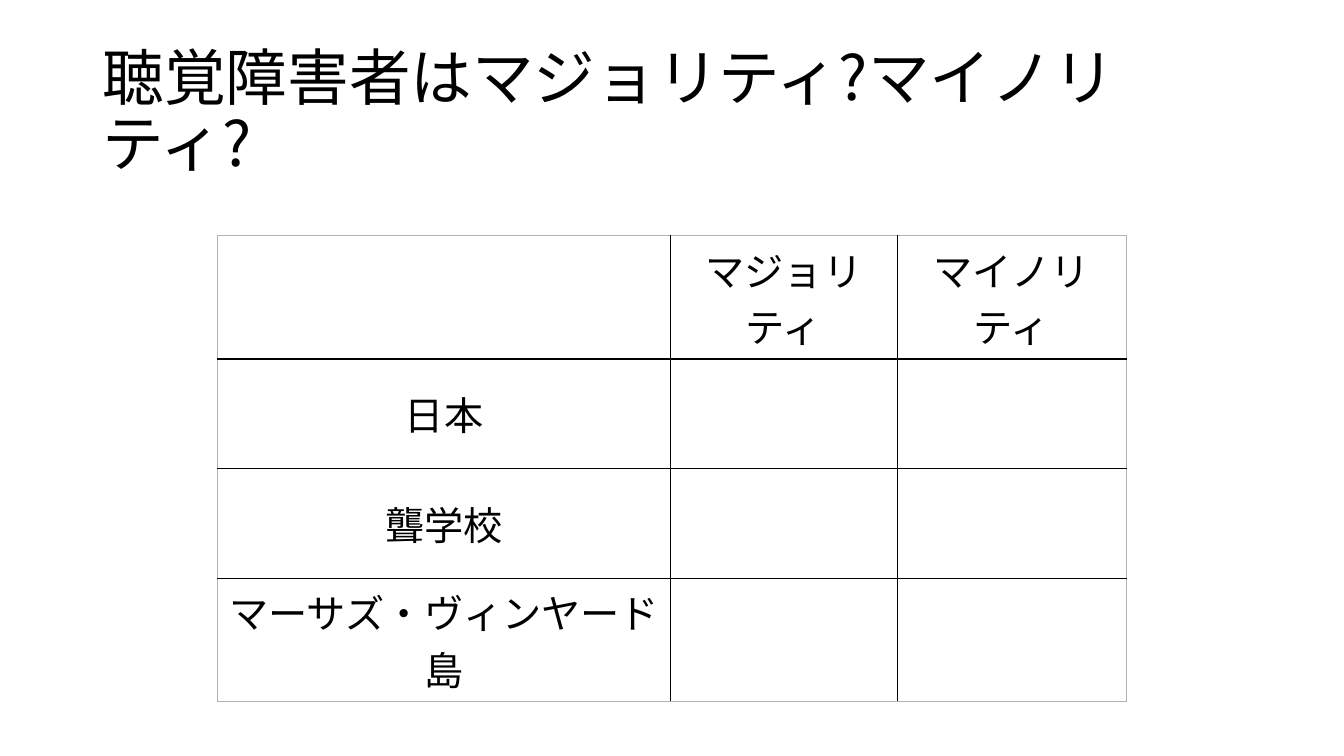
from lxml.etree import SubElement
from pptx import Presentation
from pptx.dml.color import RGBColor
from pptx.enum.text import MSO_ANCHOR, PP_ALIGN
from pptx.oxml.ns import qn
from pptx.util import Inches, Pt

THEME = {
    "font": "Noto Sans CJK JP",
    "text": "000000",
    "line": "000000",
    "edge": "B2B2B2",
    "title": 44,
    "cell": 28,
    "rule": 1,
    "header_rule": 2,
}


def write(tf, text, size, **formats):
    p = tf.paragraphs[0]
    for name, value in formats.items():
        setattr(p, name, value)
    r = p.add_run()
    r.text = text
    font = {"name": THEME["font"], "size": Pt(size)}
    for name, value in font.items():
        setattr(r.font, name, value)
    r.font.color.rgb = RGBColor.from_string(THEME["text"])
    rPr = r._r.get_or_add_rPr()
    rPr.set("lang", "ja-JP")
    SubElement(rPr, qn("a:ea"), typeface=THEME["font"])


def border(cell, side, color, width):
    ln = SubElement(cell._tc.get_or_add_tcPr(), qn(f"a:{side}"), w=str(Pt(width)))
    fill = SubElement(ln, qn("a:solidFill"))
    SubElement(fill, qn("a:srgbClr"), val=color)


prs = Presentation()
prs.slide_width, prs.slide_height = Inches(13.33), Inches(7.5)
s = prs.slides.add_slide(prs.slide_layouts[6])

title = s.shapes.add_textbox(Inches(0.92), Inches(0.4), Inches(11.5), Inches(1.45))
tf = title.text_frame
for name, value in {"word_wrap": True, "vertical_anchor": MSO_ANCHOR.MIDDLE}.items():
    setattr(tf, name, value)
write(tf, "聴覚障害者はマジョリティ?マイノリティ?", THEME["title"], line_spacing=0.9)

rows = [
    ["", "マジョリティ", "マイノリティ"],
    ["日本", "", ""],
    ["聾学校", "", ""],
    ["マーサズ・ヴィンヤード島", "", ""],
]
widths = [4.49, 2.25, 2.27]
one_line, two_lines = 1.09, 1.22
heights = [two_lines, one_line, one_line, two_lines]
last_row, last_col = len(rows) - 1, len(widths) - 1

frame = s.shapes.add_table(
    len(rows), len(widths), Inches(2.16), Inches(2.34),
    Inches(sum(widths)), Inches(sum(heights)),
)
table = frame.table
for name in ("first_row", "horz_banding"):
    setattr(table, name, False)
for column, width in zip(table.columns, widths):
    column.width = Inches(width)

for i, (texts, height) in enumerate(zip(rows, heights)):
    table.rows[i].height = Inches(height)
    for j, text in enumerate(texts):
        cell = table.cell(i, j)
        cell.vertical_anchor = MSO_ANCHOR.MIDDLE
        if text:
            write(cell.text_frame, text, THEME["cell"], alignment=PP_ALIGN.CENTER)
        outer = {"lnL": j == 0, "lnR": j == last_col, "lnT": i == 0, "lnB": i == last_row}
        header = {"lnT": i == 1, "lnB": i == 0}
        for side, is_outer in outer.items():
            color = THEME["edge"] if is_outer else THEME["line"]
            width = THEME["header_rule"] if header.get(side) else THEME["rule"]
            border(cell, side, color, width)
        cell.fill.background()

prs.save("out.pptx")
